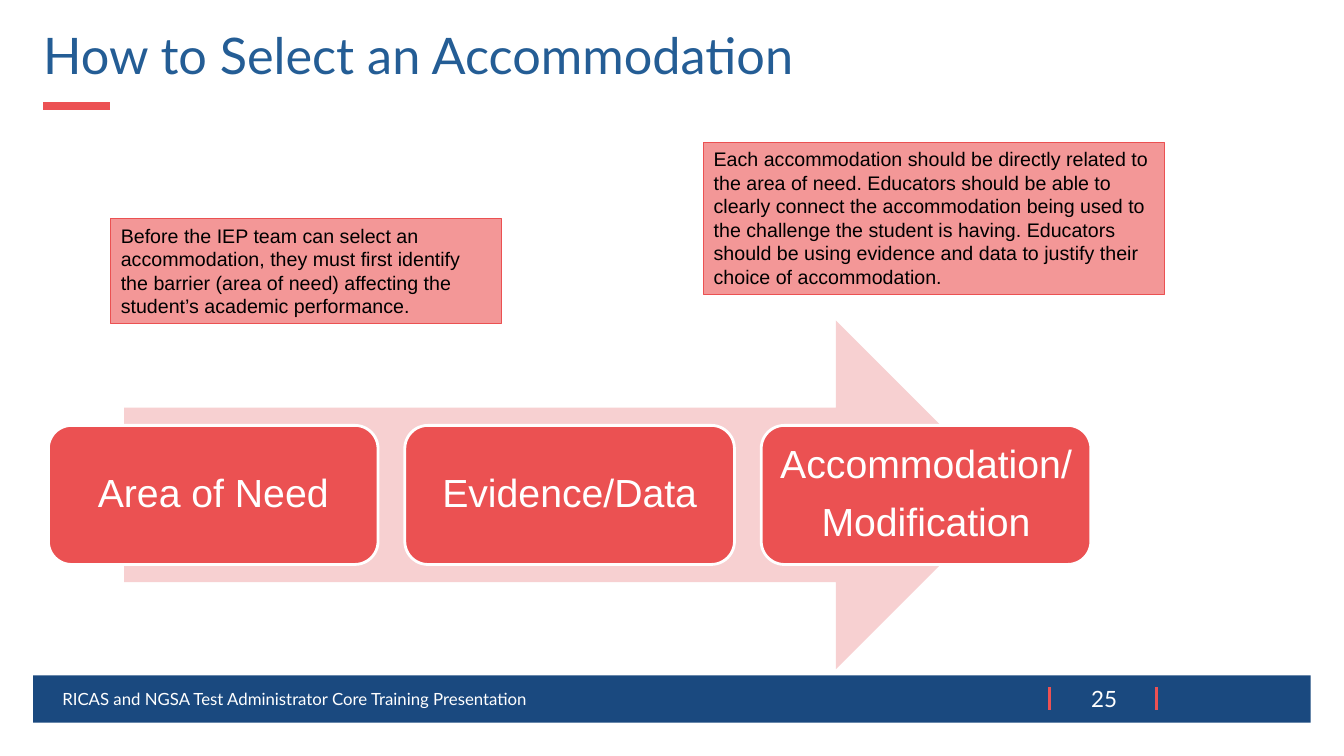
from dataclasses import dataclass

from lxml.etree import SubElement
from pptx import Presentation
from pptx.dml.color import RGBColor
from pptx.enum.shapes import MSO_CONNECTOR, MSO_SHAPE
from pptx.enum.text import MSO_ANCHOR, PP_ALIGN
from pptx.oxml.ns import qn
from pptx.shapes.autoshape import Shape
from pptx.slide import Slide
from pptx.util import Inches, Pt

WHITE = RGBColor(0xFF, 0xFF, 0xFF)
BLACK = RGBColor(0x00, 0x00, 0x00)
TITLE_BLUE = RGBColor(0x24, 0x5D, 0x95)
FOOTER_BLUE = RGBColor(0x1A, 0x49, 0x7F)
RULE_RED = RGBColor(0xEC, 0x51, 0x53)
STEP_RED = RGBColor(0xEB, 0x51, 0x52)
NOTE_PINK = RGBColor(0xF3, 0x97, 0x97)
ARROW_PINK = RGBColor(0xF7, 0xD0, 0xD1)

STEP_LEFT, STEP_TOP, STEP_WIDTH, STEP_HEIGHT = 0.48, 4.22, 3.27, 1.38
STEP_GAP = 0.265


@dataclass(frozen=True)
class Box:
    left: float
    top: float
    width: float
    height: float

    def lengths(self) -> list[Inches]:
        return [Inches(v) for v in (self.left, self.top, self.width, self.height)]


@dataclass(frozen=True)
class TextStyle:
    font: str
    size: float
    color: RGBColor
    align: PP_ALIGN = PP_ALIGN.LEFT
    anchor: MSO_ANCHOR = MSO_ANCHOR.MIDDLE
    line_spacing: float = 1.0
    space_after: float = 0


@dataclass(frozen=True)
class Label:
    text: str
    box: Box
    style: TextStyle


@dataclass(frozen=True)
class Rule:
    x1: float
    y1: float
    x2: float
    y2: float
    weight: float


TITLE = TextStyle("Lato", 36, TITLE_BLUE, anchor=MSO_ANCHOR.TOP, line_spacing=0.9)
FOOTER = TextStyle("Lato", 12, WHITE)
PAGE_NUMBER = TextStyle("Lato", 16, WHITE, PP_ALIGN.CENTER)
NOTE = TextStyle("Arial", 14, BLACK, anchor=MSO_ANCHOR.TOP)
STEP = TextStyle("Arial", 28, WHITE, PP_ALIGN.CENTER, line_spacing=0.9, space_after=11)

RULES = [
    Rule(0.43, 1.05, 1.09, 1.05, 6),
    Rule(10.41, 6.82, 10.41, 7.04, 2.25),
    Rule(11.47, 6.82, 11.47, 7.04, 2.25),
]

LABELS = [
    Label("How to Select an Accommodation", Box(0.33, 0.26, 10.63, 0.66), TITLE),
    Label("RICAS and NGSA Test Administrator Core Training Presentation",
          Box(0.52, 6.73, 8.47, 0.4), FOOTER),
    Label("25", Box(10.63, 6.75, 0.64, 0.37), PAGE_NUMBER),
]

NOTES = [
    Label("Each accommodation should be directly related to the area of need. "
          "Educators should be able to clearly connect the accommodation being used "
          "to the challenge the student is having. Educators should be using evidence "
          "and data to justify their choice of accommodation.",
          Box(6.98, 1.41, 4.57, 1.51), NOTE),
    Label("Before the IEP team can select an accommodation, they must first identify "
          "the barrier (area of need) affecting the student’s academic performance.",
          Box(1.1, 2.17, 3.87, 1.04), NOTE),
]

STEPS = ["Area of Need", "Evidence/Data", "Accommodation/\nModification"]


def write(shape: Shape, text: str, style: TextStyle) -> None:
    frame = shape.text_frame
    frame.text = text
    frame.word_wrap = True
    frame.vertical_anchor = style.anchor
    for paragraph in frame.paragraphs:
        paragraph.alignment = style.align
        paragraph.line_spacing = style.line_spacing
        paragraph.space_after = Pt(style.space_after)
        for run in paragraph.runs:
            run.font.name = style.font
            run.font.size = Pt(style.size)
            run.font.color.rgb = style.color


def add_filled(slide: Slide, kind: MSO_SHAPE, box: Box, fill: RGBColor,
               outline: RGBColor | None = None, weight: float = 0) -> Shape:
    shape = slide.shapes.add_shape(kind, *box.lengths())
    shape.shadow.inherit = False
    shape.fill.solid()
    shape.fill.fore_color.rgb = fill
    if outline is None:
        shape.line.fill.background()
    else:
        shape.line.color.rgb = outline
        shape.line.width = Pt(weight)
    return shape


def add_rule(slide: Slide, rule: Rule) -> None:
    ends = [Inches(v) for v in (rule.x1, rule.y1, rule.x2, rule.y2)]
    line = slide.shapes.add_connector(MSO_CONNECTOR.STRAIGHT, *ends)
    line.line.color.rgb = RULE_RED
    line.line.width = Pt(rule.weight)
    SubElement(line._element.spPr, qn("a:effectLst"))


def add_steps(slide: Slide) -> None:
    """Draw the wide arrow with the evenly spaced steps on top of it."""
    add_filled(slide, MSO_SHAPE.RIGHT_ARROW, Box(1.23, 3.18, 8.79, 3.46), ARROW_PINK)
    for index, text in enumerate(STEPS):
        left = STEP_LEFT + index * (STEP_WIDTH + STEP_GAP)
        box = Box(left, STEP_TOP, STEP_WIDTH, STEP_HEIGHT)
        step = add_filled(slide, MSO_SHAPE.ROUNDED_RECTANGLE, box, STEP_RED, WHITE, 2)
        write(step, text, STEP)


def main() -> None:
    prs = Presentation()
    prs.slide_width, prs.slide_height = Inches(13.33), Inches(7.5)
    slide = prs.slides.add_slide(prs.slide_layouts[6])

    add_filled(slide, MSO_SHAPE.RECTANGLE, Box(0.33, 6.7, 12.67, 0.47), FOOTER_BLUE)
    for rule in RULES:
        add_rule(slide, rule)
    for label in LABELS:
        write(slide.shapes.add_textbox(*label.box.lengths()), label.text, label.style)
    add_steps(slide)
    for note in NOTES:
        panel = add_filled(slide, MSO_SHAPE.RECTANGLE, note.box, NOTE_PINK, STEP_RED, 0.75)
        write(panel, note.text, note.style)

    prs.save("out.pptx")


if __name__ == "__main__":
    main()
